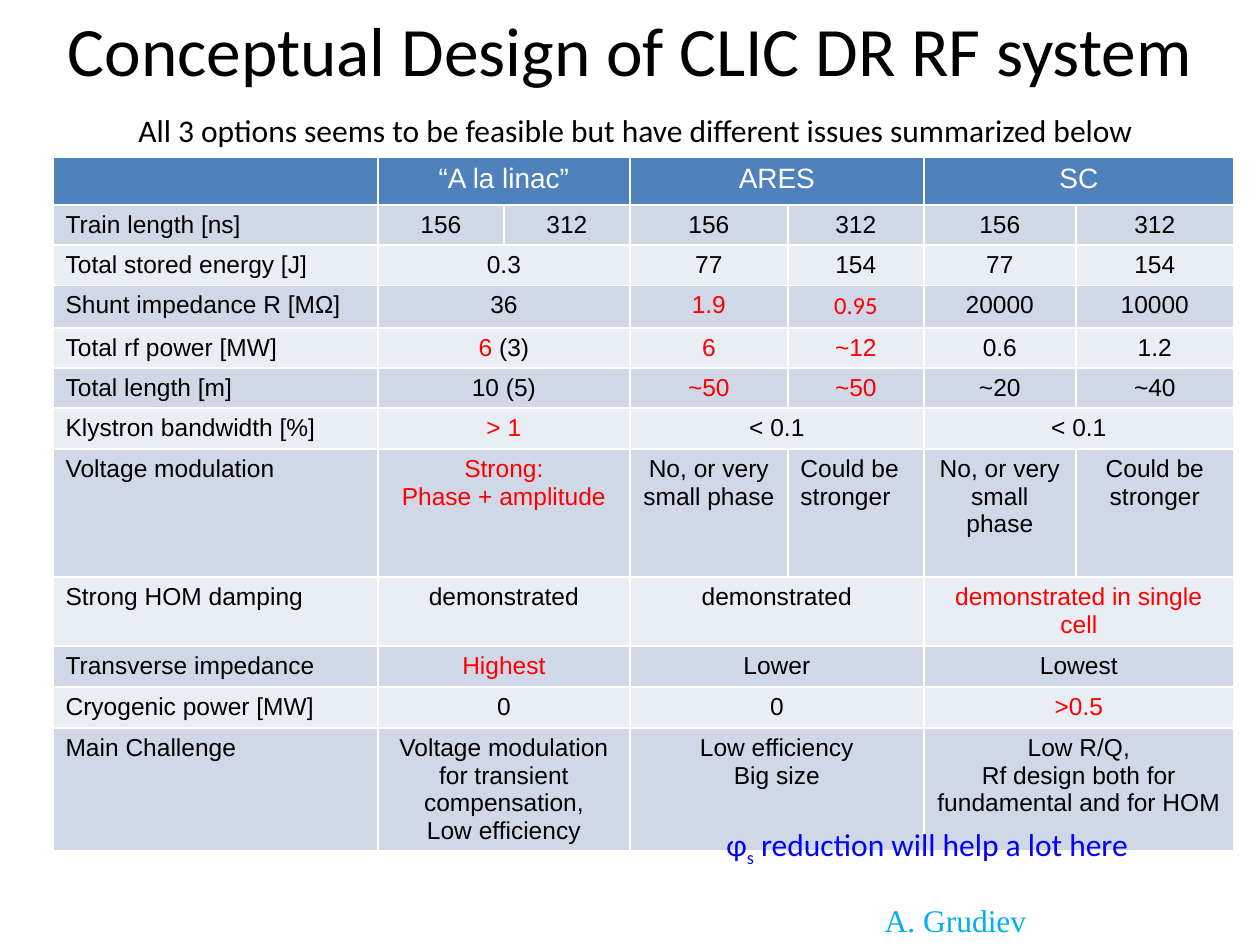
from dataclasses import dataclass

from pptx import Presentation
from pptx.dml.color import RGBColor
from pptx.enum.text import MSO_ANCHOR as Anchor, MSO_AUTO_SIZE as AutoSize, PP_ALIGN as Align
from pptx.util import Emu, Pt

PX = 914400 // 126


@dataclass(frozen=True)
class Theme:
    """Colours, fonts and type sizes of the slide."""
    black: str = "000000"
    white: str = "FFFFFF"
    red: str = "FF0000"
    blue: str = "0000FF"
    cyan: str = "00B0F0"
    header: str = "4F81BD"
    bands: tuple = ("E9EDF4", "D0D8E8")
    heading: str = "Calibri"
    body: str = "Arial"
    serif: str = "Times New Roman"
    title_size: float = 39.6
    note_size: int = 18
    head_size: int = 16
    cell_size: int = 14


T = Theme()


@dataclass(frozen=True)
class Run:
    """A piece of text with one format."""
    text: str
    color: str = T.black
    font: str = T.body
    size: float = T.cell_size
    baseline: int = 0


def red(text):
    """Return a cell whose lines are all red."""
    return [[Run(line, T.red)] for line in text.split("\n")]


def as_paragraphs(cell):
    """Turn a plain string into paragraphs of black runs."""
    if isinstance(cell, str):
        return [[Run(line)] for line in cell.split("\n")]
    return cell


HEADER = ["", "“A la linac”", None, "ARES", None, "SC", None]
ROWS = [
    ["Train length [ns]", "156", "312", "156", "312", "156", "312"],
    ["Total stored energy [J]", "0.3", None, "77", "154", "77", "154"],
    ["Shunt impedance R [MΩ]", "36", None, red("1.9"),
     [[Run("0.95", T.red, T.heading)]], "20000", "10000"],
    ["Total rf power [MW]", [[Run("6 ", T.red), Run("(3)")]], None,
     red("6"), red("~12"), "0.6", "1.2"],
    ["Total length [m]", "10 (5)", None, red("~50"), red("~50"), "~20", "~40"],
    ["Klystron bandwidth [%]", red("> 1"), None, "< 0.1", None, "< 0.1", None],
    ["Voltage modulation", red("Strong:\nPhase + amplitude"), None,
     "No, or very small phase", "Could be stronger",
     "No, or very small phase", "Could be stronger"],
    ["Strong HOM damping", "demonstrated", None, "demonstrated", None,
     red("demonstrated in single cell"), None],
    ["Transverse impedance", red("Highest"), None, "Lower", None, "Lowest", None],
    ["Cryogenic power [MW]", "0", None, "0", None, red(">0.5"), None],
    ["Main Challenge",
     "Voltage modulation for transient compensation,\nLow efficiency", None,
     "Low efficiency\nBig size", None,
     "Low R/Q,\nRf design both for fundamental and for HOM", None],
]
COLUMN_WIDTHS = [325, 126, 126, 158, 136, 152, 158]
ROW_HEIGHTS = [48, 40, 40, 42, 40, 40, 41, 128, 69, 41, 41, 123]
LEFT_ALIGNED = {(7, 4)}


def emu(box):
    """Scale px lengths to EMU."""
    return [Emu(v * PX) for v in box]


def write(tf, paragraphs, align):
    """Write paragraphs into a text frame run by run."""
    for i, runs in enumerate(paragraphs):
        p = tf.add_paragraph() if i else tf.paragraphs[0]
        p.alignment = align
        for run in runs:
            r = p.add_run()
            r.text = run.text
            r.font.name = run.font
            r.font.size = Pt(run.size)
            r.font.bold = False
            r.font.color.rgb = RGBColor.from_string(run.color)
            if run.baseline:
                r.font._element.set("baseline", str(run.baseline * 1000))


def add_title(s, box, text):
    """Move and fill the title placeholder."""
    sp = s.shapes.title
    sp.left, sp.top, sp.width, sp.height = emu(box)
    tf = sp.text_frame
    tf.vertical_anchor = Anchor.MIDDLE
    tf.auto_size = AutoSize.NONE
    write(tf, [[Run(text, T.black, T.heading, T.title_size)]], Align.CENTER)


def add_note(s, box, runs, align=Align.LEFT, wrap=False):
    """Add a one-line note in a text box."""
    tf = s.shapes.add_textbox(*emu(box)).text_frame
    tf.word_wrap = wrap
    tf.auto_size = AutoSize.SHAPE_TO_FIT_TEXT
    write(tf, [runs], align)


def fill_cell(cell, color):
    """Give a table cell a solid fill."""
    cell.fill.solid()
    cell.fill.fore_color.rgb = RGBColor.from_string(color)


def add_comparison(s, left, top):
    """Add the table that compares the three RF options."""
    box = (left, top, sum(COLUMN_WIDTHS), sum(ROW_HEIGHTS))
    table = s.shapes.add_table(len(ROW_HEIGHTS), len(COLUMN_WIDTHS), *emu(box)).table
    for column, width in zip(table.columns, emu(COLUMN_WIDTHS)):
        column.width = width
    for row, height in zip(table.rows, emu(ROW_HEIGHTS)):
        row.height = height
    header = [t and [[Run(t, T.white, size=T.head_size)]] for t in HEADER]
    for i, row in enumerate([header] + ROWS):
        for j, content in enumerate(row):
            cell = table.cell(i, j)
            fill_cell(cell, T.bands[i % 2] if i else T.header)
            if content is None:
                table.cell(i, j - 1).merge(cell)
            elif content:
                left_side = j == 0 or (i, j) in LEFT_ALIGNED
                write(cell.text_frame, as_paragraphs(content),
                      Align.LEFT if left_side else Align.CENTER)
            else:
                cell.text_frame.paragraphs[0].font.size = Pt(T.head_size)


def main():
    """Build and save the slide."""
    prs = Presentation()
    prs.slide_width, prs.slide_height = emu((1260, 945))
    s = prs.slides.add_slide(prs.slide_layouts[5])
    add_title(s, (0, 0, 1260, 98), "Conceptual Design of CLIC DR RF system")
    add_comparison(s, 53, 157)
    add_note(s, (126, 105, 1033, 51), [
        Run("All 3 options seems to be feasible but have different issues summarized below",
            T.black, T.heading, T.note_size)])
    add_note(s, (714, 819, 441, 51), [
        Run("φ", T.blue, T.heading, T.note_size),
        Run("s", T.blue, T.heading, T.note_size, -25),
        Run(" reduction will help a lot here", T.blue, T.heading, T.note_size)])
    add_note(s, (693, 895, 525, 51),
             [Run("A. Grudiev", T.cyan, T.serif, T.note_size)], Align.CENTER, True)
    prs.save("out.pptx")


if __name__ == "__main__":
    main()
